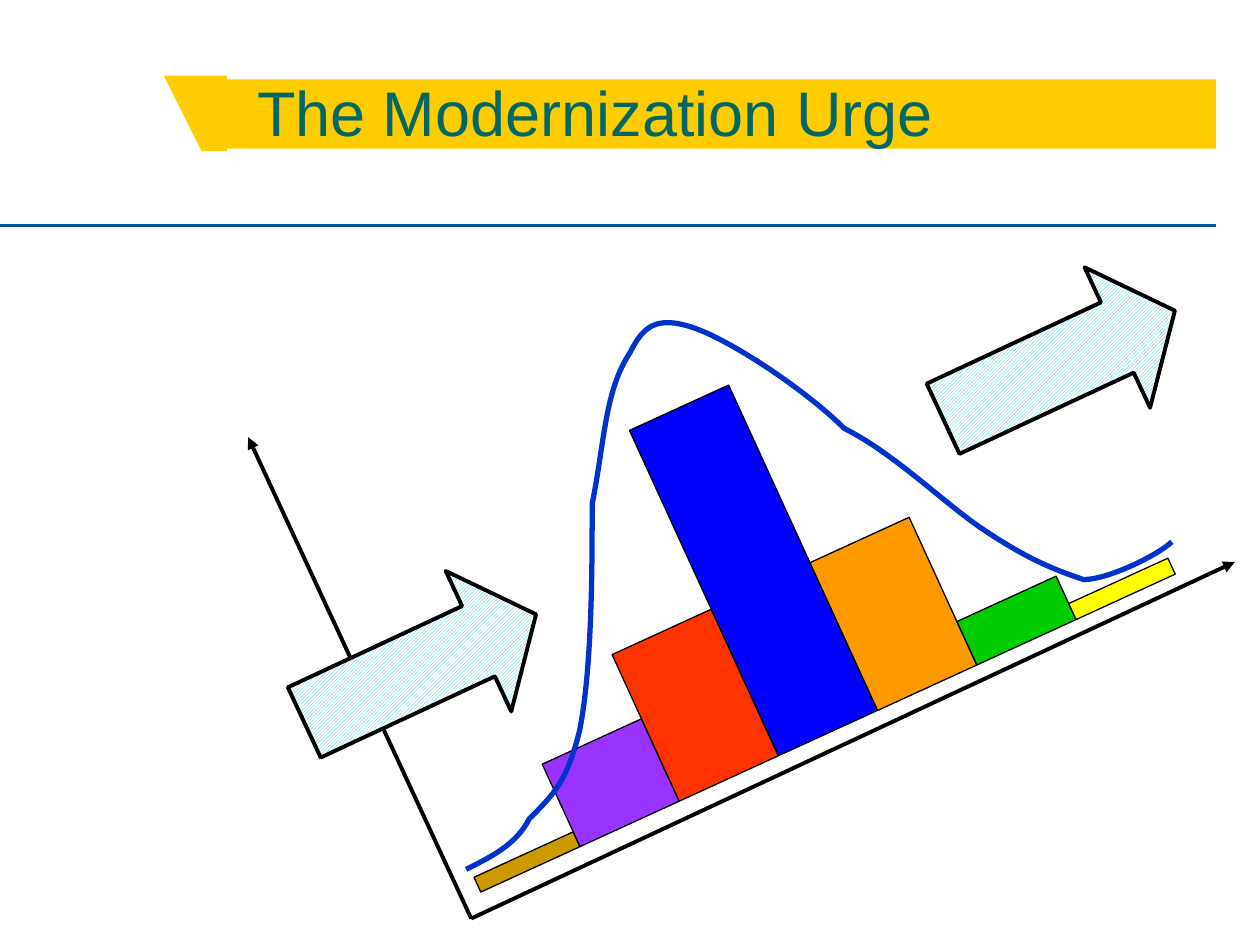
from dataclasses import dataclass
from math import cos, radians, sin

from lxml.etree import SubElement
from pptx import Presentation
from pptx.dml.color import RGBColor
from pptx.enum.dml import MSO_PATTERN
from pptx.enum.shapes import MSO_CONNECTOR, MSO_SHAPE
from pptx.enum.text import MSO_ANCHOR, MSO_AUTO_SIZE, PP_ALIGN
from pptx.oxml.ns import qn
from pptx.util import Inches, Pt


@dataclass(frozen=True)
class Theme:
    font: str = "Arial"
    title_size: int = 36
    title: str = "006666"
    banner: str = "FFCC00"
    rule: str = "005696"
    ink: str = "000000"
    curve: str = "0033CC"
    hatch: str = "33CCCC"
    paper: str = "FFFFFF"
    thin: float = 0.75
    medium: float = 2.25
    thick: float = 3


T = Theme()
rgb = RGBColor.from_string

prs = Presentation()
prs.slide_width, prs.slide_height = Inches(10), Inches(7.5)
U = prs.slide_width // 100  # square grid: 100 columns by 75 rows
s = prs.slides.add_slide(prs.slide_layouts[5])


def style(sp, fill=None, line=None, width=T.thin):
    sp.shadow.inherit = False
    if fill:
        sp.fill.solid()
        sp.fill.fore_color.rgb = rgb(fill)
    else:
        sp.fill.background()
    if line:
        sp.line.color.rgb = rgb(line)
        sp.line.width = Pt(width)
    else:
        sp.line.fill.background()


def add_line(start, end, color, arrow=False):
    c = s.shapes.add_connector(MSO_CONNECTOR.STRAIGHT, *(round(v * U) for v in start + end))
    c.line.color.rgb = rgb(color)
    c.line.width = Pt(T.medium)
    if arrow:
        SubElement(c.line._get_or_add_ln(), qn("a:tailEnd"), type="triangle")
    SubElement(c._element.spPr, qn("a:effectLst"))


# Header: rule and banner with a slanted left end
add_line((0, 17.9), (96.5, 17.9), T.rule)
fb = s.shapes.build_freeform(13.4, 6.3, scale=U)
fb.add_line_segments([(17.7, 6.3), (17.7, 11.8), (15.5, 11.8)], close=True)
style(fb.convert_to_shape(), T.banner)
style(s.shapes.add_shape(MSO_SHAPE.RECTANGLE, round(17.7 * U), round(6.3 * U),
                         round(78.8 * U), round(5.5 * U)), T.banner)

# Histogram: equal bars standing on a tilted baseline
TILT = 24.6
dx, dy = cos(radians(TILT)), sin(radians(TILT))
bar_w, base_x, base_y = 8.66, 42.1, 69
bars = [("CC9900", 1.3), ("9933FF", 7.2), ("FF3300", 12.8), ("0000FF", 28.4),
        ("FF9900", 12.9), ("00CC00", 3.8), ("FFFF00", 1.4)]
for i, (color, h) in enumerate(bars):
    cx = base_x + i * bar_w * dx - h / 2 * dy
    cy = base_y - i * bar_w * dy - h / 2 * dx
    sp = s.shapes.add_shape(MSO_SHAPE.RECTANGLE, round((cx - bar_w / 2) * U),
                            round((cy - h / 2) * U), round(bar_w * U), round(h * U))
    sp.rotation = 360 - TILT
    style(sp, color, T.ink)

# Tilted axes
origin = (37.4, 72.9)
for end in [(98, 44.6), (19.7, 34.7)]:
    add_line(origin, end, T.ink, arrow=True)

# Distribution curve: a start, then two control points and an end per segment
curve = [(36.8, 68.8),
         (38.9, 67.8), (41, 66.9), (42.5, 65),
         (44, 63.2), (45.1, 61.7), (45.9, 57.5),
         (46.7, 53.4), (46.8, 45), (47.4, 40.2),
         (48, 35.3), (48.2, 30.8), (49.5, 28.5),
         (50.8, 26.1), (52.2, 25.1), (55.2, 25.9),
         (58.1, 26.8), (63.5, 30.9), (67.3, 33.6),
         (71, 36.3), (74.8, 40), (77.8, 42),
         (80.9, 44), (83.1, 45.4), (85.6, 45.6),
         (88.2, 45.8), (92, 43.7), (93.3, 43.3)]
fb = s.shapes.build_freeform(*curve[0], scale=U)
fb.add_line_segments(curve[1:], close=False)
sp = fb.convert_to_shape()
outline = sp._element.find(".//" + qn("a:path"))
steps = outline.findall(qn("a:lnTo"))
for i in range(0, len(steps), 3):
    bezier = SubElement(outline, qn("a:cubicBezTo"))
    for step in steps[i:i + 3]:
        bezier.append(step[0])
        outline.remove(step)
style(sp, line=T.curve, width=T.thick)

# Hatched arrows pushing along the baseline
for x, y in [(73.9, 22.8), (23.2, 46.9)]:
    sp = s.shapes.add_shape(MSO_SHAPE.RIGHT_ARROW, round(x * U), round(y * U),
                            round(20.3 * U), round(12.3 * U))
    sp.adjustments[0], sp.adjustments[1] = 0.5, 0.41
    sp.rotation = 335
    style(sp, line=T.ink, width=T.medium)
    sp.fill.patterned()
    sp.fill.pattern = MSO_PATTERN.LIGHT_UPWARD_DIAGONAL
    sp.fill.fore_color.rgb = rgb(T.hatch)
    sp.fill.back_color.rgb = rgb(T.paper)

# Title, brought in front of the banner
title = s.shapes.title
s.shapes._spTree.append(title._element)
title.left, title.top = round(19.4 * U), round(3.3 * U)
title.width, title.height = round(75.6 * U), round(9 * U)
tf = title.text_frame
tf.auto_size = MSO_AUTO_SIZE.NONE
tf.word_wrap = True
tf.vertical_anchor = MSO_ANCHOR.BOTTOM
p = tf.paragraphs[0]
p.alignment = PP_ALIGN.LEFT
r = p.add_run()
r.text = "The Modernization Urge"
r.font.name, r.font.size = T.font, Pt(T.title_size)
r.font.color.rgb = rgb(T.title)

prs.save("out.pptx")
